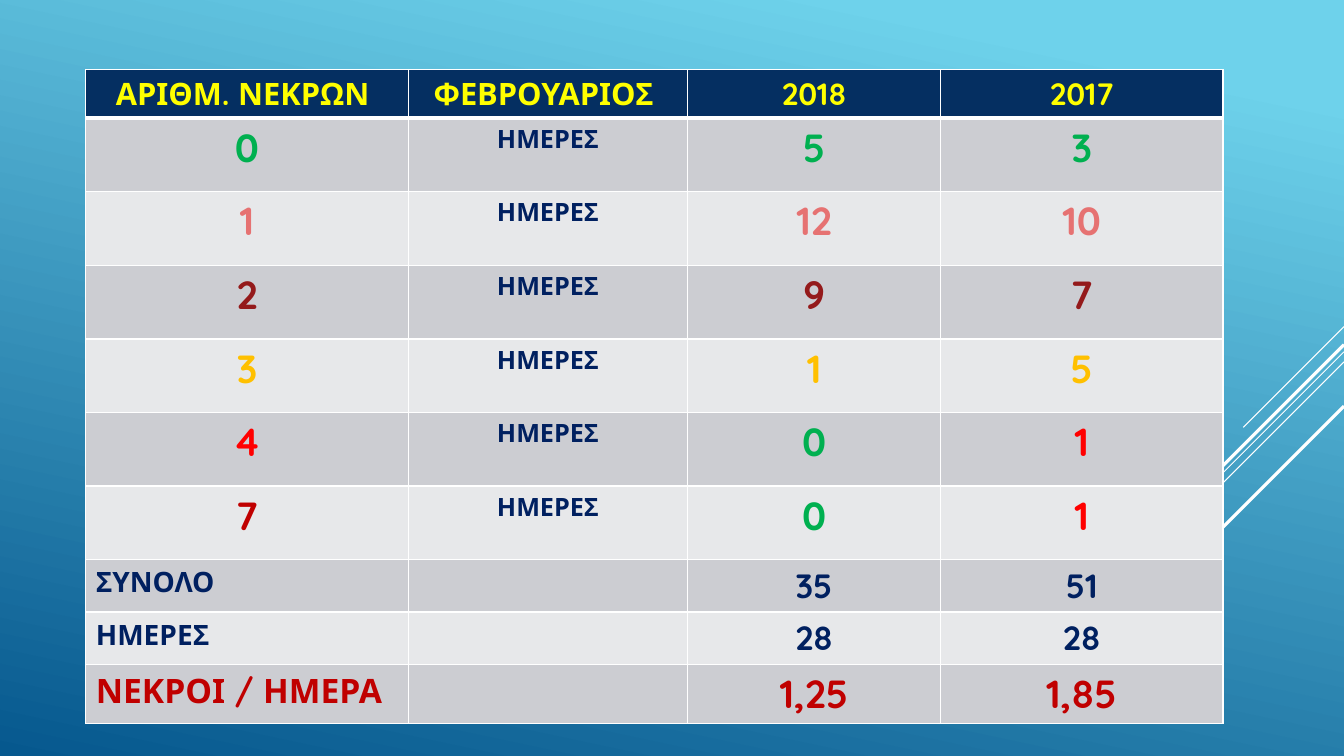
from lxml.etree import SubElement
from pptx import Presentation
from pptx.dml.color import RGBColor
from pptx.enum.shapes import MSO_CONNECTOR as Connector
from pptx.enum.text import PP_ALIGN as Align
from pptx.oxml.ns import qn
from pptx.util import Inches, Pt

FONT = "Quicksand"
COLORS = {
    "sky": "6ED2EB", "deep": "06588E", "white": "FFFFFF",
    "header": "052F61", "band_dark": "CCCDD2", "band_light": "E7E8EA",
    "yellow": "FFFF00", "navy": "002060", "green": "00B050",
    "pink": "E67272", "maroon": "941A1B", "amber": "FFC000",
    "red": "FF0000", "crimson": "C00000",
}

# Diagonal lines rising to the right edge: end height, run, width in points
DIAGONALS = [(3.24, 1, 0.75), (3.49, 3.26, 0.75), (3.59, 2.07, 0.75),
             (3.42, 1.91, 2.25), (4.03, 1.39, 2.25)]

COLUMN_WIDTHS = [3.2, 2.77, 2.51, 2.8]
ROW_HEIGHTS = [0.47] + [0.73] * 6 + [0.52] * 2 + [0.58]
HEADINGS = ["ΑΡΙΘΜ. ΝΕΚΡΩΝ ", "ΦΕΒΡΟΥΑΡΙΟΣ ", "2018", "2017"]

# Deaths per day, days in 2018, days in 2017, with the colour of each
DAY_COUNTS = [
    (("0", "green"), ("5", "green"), ("3", "green")),
    (("1", "pink"), ("12", "pink"), ("10", "pink")),
    (("2", "maroon"), ("9", "maroon"), ("7", "maroon")),
    (("3", "amber"), ("1", "amber"), ("5", "amber")),
    (("4", "red"), ("0", "green"), ("1", "red")),
    (("7", "crimson"), ("0", "green"), ("1", "red")),
]

# Label, 2018, 2017, label size, value size, colour
SUMMARIES = [
    ("ΣΥΝΟΛΟ", "35", "51", 20, 24, "navy"),
    ("ΗΜΕΡΕΣ", "28", "28", 20, 24, "navy"),
    ("ΝΕΚΡΟΙ / ΗΜΕΡΑ", "1,25", "1,85", 24, 28, "crimson"),
]


def rgb(name):
    return RGBColor.from_string(COLORS[name])


def paint_background(page):
    fill = page.background.fill
    fill.gradient()
    fill.gradient_angle = 258
    for stop, position, name in zip(fill.gradient_stops, (0.1, 1), ("sky", "deep")):
        stop.position = position
        stop.color.rgb = rgb(name)


def add_diagonal(page, right, top, run, width):
    line = page.shapes.add_connector(
        Connector.STRAIGHT, Inches(right), Inches(top),
        Inches(right - run), Inches(top + run))
    line.line.color.rgb = rgb("white")
    line.line.width = Pt(width)
    SubElement(line._element.spPr, qn("a:effectLst"))


def set_borders(cell, bottom_width):
    properties = cell._tc.get_or_add_tcPr()
    for side in ("L", "R", "T", "B"):
        width = bottom_width if side == "B" else 1
        border = SubElement(properties, qn(f"a:ln{side}"), w=str(Pt(width)))
        solid = SubElement(border, qn("a:solidFill"))
        SubElement(solid, qn("a:srgbClr"), val=COLORS["white"])


def style_cell(cell, fill_name, bottom_width=1):
    set_borders(cell, bottom_width)
    cell.fill.solid()
    cell.fill.fore_color.rgb = rgb(fill_name)


def write_cell(cell, text, size, color, align=Align.CENTER):
    para = cell.text_frame.paragraphs[0]
    para.alignment = align
    run = para.add_run()
    run.text = text
    run.font.name = FONT
    run.font.size = Pt(size)
    run.font.bold = True
    run.font.color.rgb = rgb(color)


def add_death_table(page):
    frame = page.shapes.add_table(
        len(ROW_HEIGHTS), len(COLUMN_WIDTHS), Inches(0.85), Inches(0.69),
        Inches(sum(COLUMN_WIDTHS)), Inches(sum(ROW_HEIGHTS)))
    table = frame.table
    for column, width in zip(table.columns, COLUMN_WIDTHS):
        column.width = Inches(width)
    for row, height in zip(table.rows, ROW_HEIGHTS):
        row.height = Inches(height)

    # Fills and borders
    for index, row in enumerate(table.rows):
        for cell in row.cells:
            if index == 0:
                style_cell(cell, "header", bottom_width=3)
            else:
                style_cell(cell, "band_dark" if index % 2 else "band_light")

    # Header row
    for column, heading in enumerate(HEADINGS):
        write_cell(table.cell(0, column), heading, 22, "yellow")

    # Days by number of deaths
    for row, counts in enumerate(DAY_COUNTS, start=1):
        for column, (text, color) in zip((0, 2, 3), counts):
            write_cell(table.cell(row, column), text, 28, color)
        write_cell(table.cell(row, 1), "ΗΜΕΡΕΣ", 18, "navy")

    # Totals and daily average
    first_summary = len(DAY_COUNTS) + 1
    for row, summary in enumerate(SUMMARIES, start=first_summary):
        label, *values, label_size, value_size, color = summary
        write_cell(table.cell(row, 0), label, label_size, color, Align.LEFT)
        for column, value in enumerate(values, start=2):
            write_cell(table.cell(row, column), value, value_size, color)


def main():
    deck = Presentation()
    deck.slide_width = Inches(13.33)
    deck.slide_height = Inches(7.5)
    page = deck.slides.add_slide(deck.slide_layouts[6])
    paint_background(page)
    for top, run, width in DIAGONALS:
        add_diagonal(page, 13.33, top, run, width)
    add_death_table(page)
    deck.save("out.pptx")


if __name__ == "__main__":
    main()
